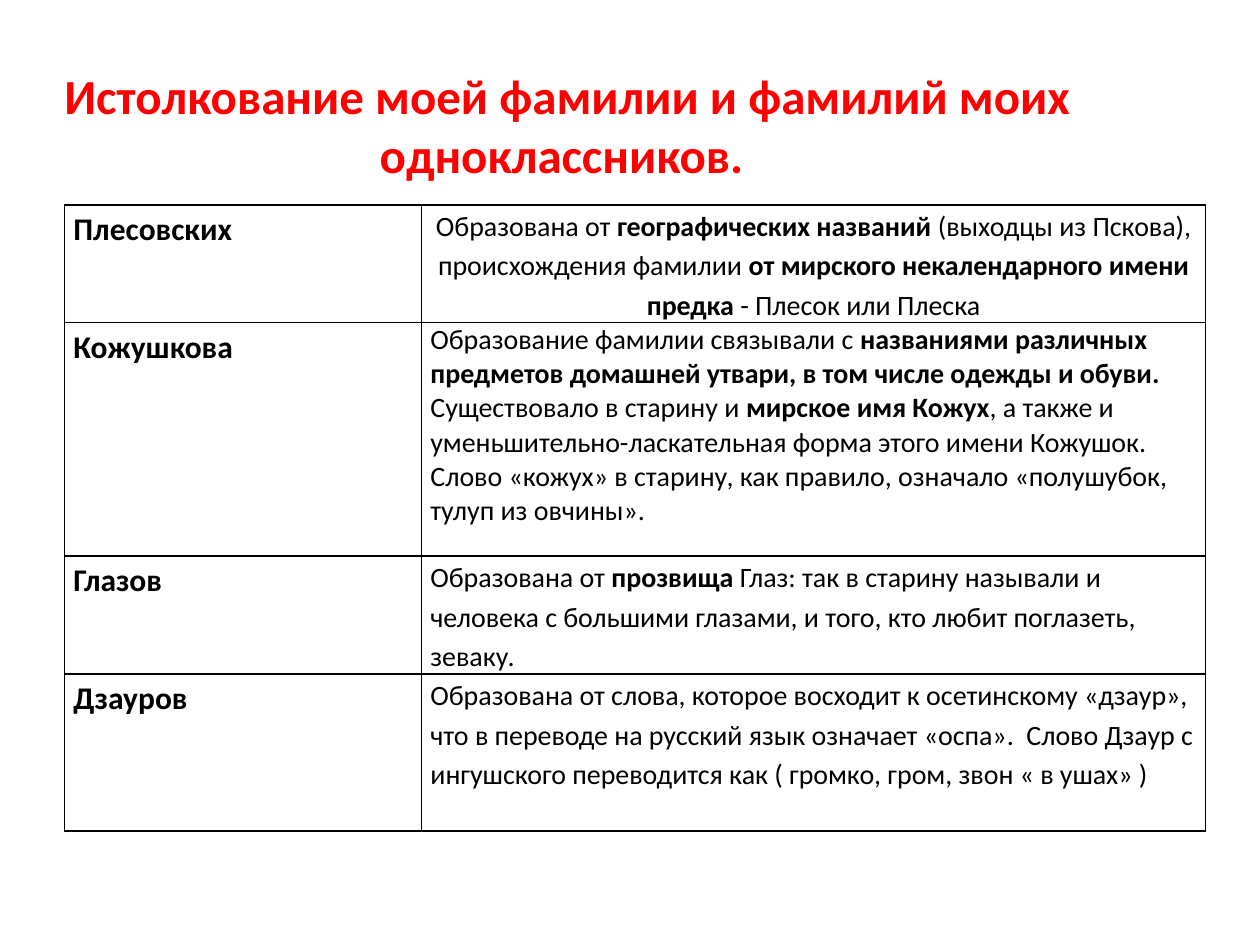
from lxml.etree import SubElement
from pptx import Presentation
from pptx.dml.color import RGBColor
from pptx.enum.text import MSO_ANCHOR, PP_ALIGN
from pptx.oxml.ns import qn
from pptx.util import Pt

RED = RGBColor(255, 0, 0)
BLACK = RGBColor(0, 0, 0)
FONT = "Calibri"
TITLE = "Истолкование моей фамилии и фамилий моих одноклассников. "
WIDTHS = (204, 448)
ROWS = [
    ("Плесовских", 67.4, 1.15, PP_ALIGN.CENTER, [
        "Образована от *географических названий *(выходцы из Пскова), "
        "происхождения фамилии *от мирского некалендарного имени предка*"
        " - Плесок или Плеска"]),
    ("Кожушкова", 133.4, 1.0, PP_ALIGN.LEFT, [
        "Образование фамилии связывали с *названиями различных предметов "
        "домашней утвари, в том числе одежды и обуви.*",
        "Существовало в старину и* мирское имя Кожух*, а также и "
        "уменьшительно-ласкательная форма этого имени Кожушок. Слово «кожух» "
        "в старину, как правило, означало «полушубок, тулуп из овчины»."]),
    ("Глазов", 67.4, 1.15, PP_ALIGN.LEFT, [
        "Образована от *прозвища *Глаз: так в старину называли и человека "
        "с большими глазами, и того, кто любит поглазеть, зеваку."]),
    ("Дзауров", 89.8, 1.15, PP_ALIGN.LEFT, [
        "Образована от слова, которое восходит к осетинскому «дзаур», что в "
        "переводе на русский язык означает «оспа».  Слово Дзаур с ингушского "
        "переводится как ( громко, гром, звон « в ушах» )"]),
]


def write(para, text, size, color=BLACK, align=PP_ALIGN.LEFT, space=1.0):
    para.alignment = align
    para.line_spacing = space
    for i, part in enumerate(text.split("*")):
        if part:
            run = para.add_run()
            run.text = part
            font = run.font
            font.name, font.size, font.bold = FONT, Pt(size), i % 2 == 1
            font.color.rgb = color


def add_title(slide):
    box = slide.shapes.add_textbox(Pt(0), Pt(26), Pt(648), Pt(90))
    frame = box.text_frame
    frame.word_wrap = True
    frame.vertical_anchor = MSO_ANCHOR.MIDDLE
    write(frame.paragraphs[0], "*" + TITLE, 28, RED, PP_ALIGN.CENTER)


def add_edges(cell):
    props = cell._tc.get_or_add_tcPr()
    for i, side in enumerate(("lnL", "lnR", "lnT", "lnB")):
        line = props.makeelement(qn("a:" + side), {"w": str(Pt(1))})
        fill = SubElement(line, qn("a:solidFill"))
        SubElement(fill, qn("a:srgbClr"), val=str(BLACK))
        props.insert(i, line)


def fill_cell(cell, texts, size, align, space):
    cell.margin_left = cell.margin_right = Pt(5)
    cell.margin_top = cell.margin_bottom = Pt(0)
    cell.fill.background()
    add_edges(cell)
    frame = cell.text_frame
    for i, text in enumerate(texts):
        para = frame.add_paragraph() if i else frame.paragraphs[0]
        write(para, text, size, align=align, space=space)


def add_grid(slide):
    high = sum(row[1] for row in ROWS)
    table = slide.shapes.add_table(
        len(ROWS), len(WIDTHS), Pt(37), Pt(117), Pt(sum(WIDTHS)), Pt(high)).table
    table.first_row = table.horz_banding = False
    for col, width in zip(table.columns, WIDTHS):
        col.width = Pt(width)
    for i, (name, height, space, align, texts) in enumerate(ROWS):
        table.rows[i].height = Pt(height)
        fill_cell(table.cell(i, 0), ["*" + name], 18, PP_ALIGN.LEFT, 1.15)
        fill_cell(table.cell(i, 1), texts, 16, align, space)


def main():
    deck = Presentation()
    deck.slide_width, deck.slide_height = Pt(720), Pt(540)
    slide = deck.slides.add_slide(deck.slide_layouts[6])
    add_title(slide)
    add_grid(slide)
    deck.save("out.pptx")


if __name__ == "__main__":
    main()
